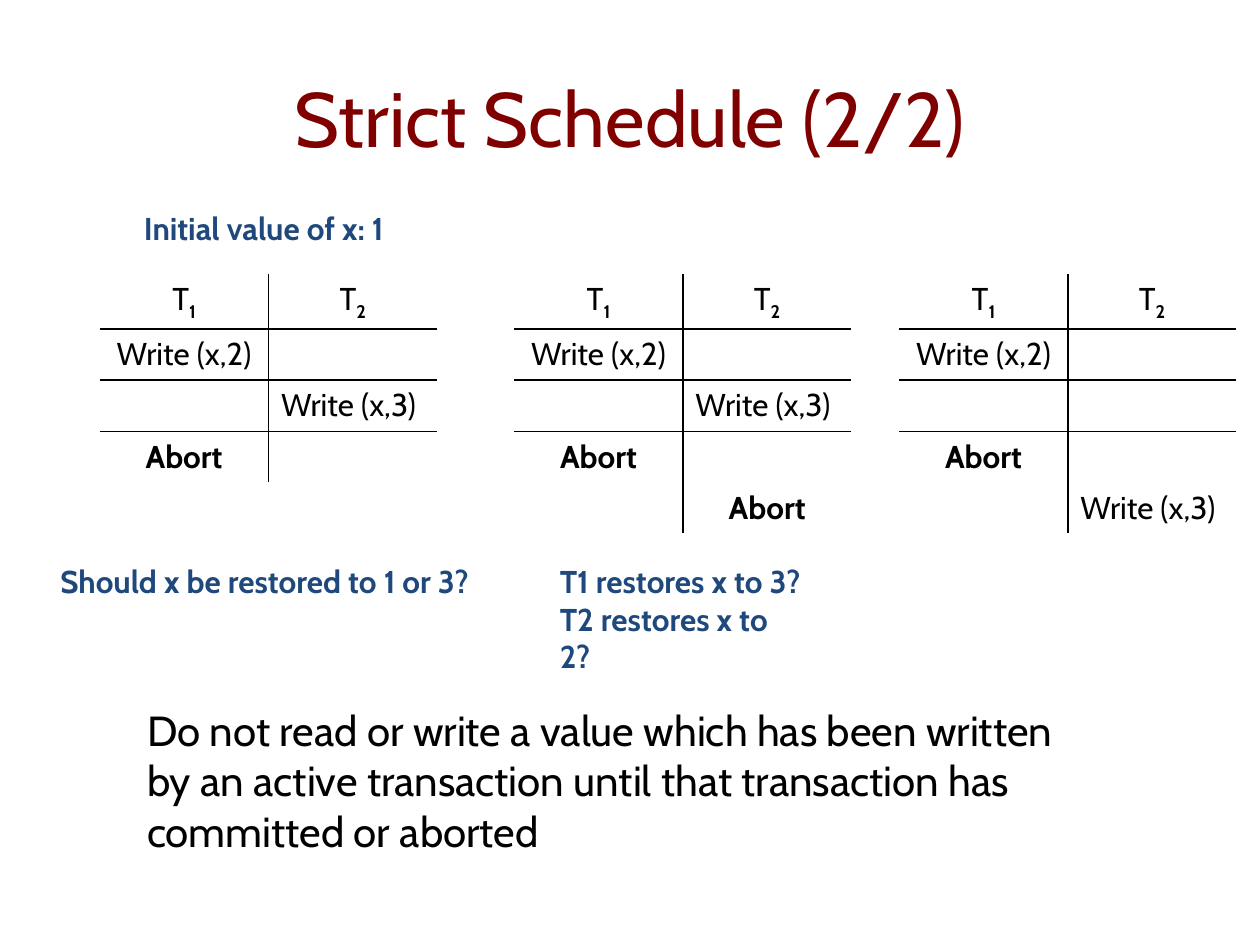
"""Build a slide showing three transaction schedules and the strict schedule rule."""

from dataclasses import dataclass

from lxml import etree
from pptx import Presentation
from pptx.dml.color import RGBColor
from pptx.enum.text import MSO_ANCHOR, MSO_AUTO_SIZE, PP_ALIGN
from pptx.oxml.ns import qn
from pptx.util import Pt

CENTER, LEFT = PP_ALIGN.CENTER, PP_ALIGN.LEFT
MIDDLE = MSO_ANCHOR.MIDDLE
NO_FIT = MSO_AUTO_SIZE.NONE
FONT = "Cabin"
COLORS = {"title": "800000", "note": "1F497D", "text": "000000", "line": "000000"}
PLAIN_STYLE = "{2D5ABB26-0587-4C30-8999-92F81FD0307C}"
TABLE_TOP, COLUMN_WIDTH, ROW_HEIGHT = 156.3, 96.4, 29.2
RULED_ROWS = 2


@dataclass
class Schedule:
    left: float
    steps: list[tuple[str, str]]


@dataclass
class Note:
    left: float
    top: float
    width: float
    height: float
    lines: list[str]
    size: float = 18
    color: str = "note"
    bold: bool = True
    wrap: bool = False


SCHEDULES = [
    Schedule(57, [("Write (x,2)", ""), ("", "Write (x,3)"), ("Abort", "")]),
    Schedule(293.8, [("Write (x,2)", ""), ("", "Write (x,3)"), ("Abort", ""), ("", "Abort")]),
    Schedule(513.8, [("Write (x,2)", ""), ("", ""), ("Abort", ""), ("", "Write (x,3)")]),
]
NOTES = [
    Note(75.2, 116, 160, 29, ["Initial value of x: 1"]),
    Note(27.4, 317.5, 248, 29, ["Should x be restored to 1 or 3?"]),
    Note(312.8, 317.5, 154, 51, ["T1 restores x to 3?", "T2 restores x to 2?"], wrap=True),
    Note(77, 399, 553, 94.5,
         ["Do not read or write a value which has been written by an active "
          "transaction until that transaction has committed or aborted"],
         size=24, color="text", bold=False, wrap=True),
]


def style_font(font, size: float, color: str, bold: bool = False) -> None:
    """Apply the deck's typeface with the given size, colour and weight."""
    font.name = FONT
    font.size = Pt(size)
    font.bold = bold
    font.color.rgb = RGBColor.from_string(COLORS[color])


def add_border(cell, side: str) -> None:
    """Draw a one-point line on a cell side such as lnB, in schema order."""
    line = etree.Element(qn(f"a:{side}"), w=str(Pt(1)))
    fill = etree.SubElement(line, qn("a:solidFill"))
    etree.SubElement(fill, qn("a:srgbClr"), val=COLORS["line"])
    properties = cell._tc.get_or_add_tcPr()
    position = sum(child.tag.startswith(qn("a:ln")) for child in properties)
    properties.insert(position, line)


def fill_header(para, number: int) -> None:
    """Write a transaction name with its bold subscript."""
    para.alignment = CENTER
    for text, bold in (("T", False), (str(number), True)):
        span = para.add_run()
        span.text = text
        style_font(span.font, 18, "text", bold)
        if bold:
            span.font._element.set("baseline", "-25000")


def fill_step(para, text: str, column: int) -> None:
    """Write one operation, with writes of the second transaction set left."""
    para.text = text
    para.alignment = LEFT if column == 1 and text.startswith("Write") else CENTER
    style_font(para.font, 18, "text", text == "Abort")


def add_schedule(page, schedule: Schedule) -> None:
    """Draw one schedule as a two-column table."""
    rows = len(schedule.steps) + 1
    frame = page.shapes.add_table(
        rows, 2, Pt(schedule.left), Pt(TABLE_TOP),
        Pt(2 * COLUMN_WIDTH), Pt(rows * ROW_HEIGHT))
    table = frame.table
    table.first_row = table.horz_banding = False
    table._tbl.tblPr.find(qn("a:tableStyleId")).text = PLAIN_STYLE
    for row in range(rows):
        for column in range(2):
            cell = table.cell(row, column)
            cell.fill.background()
            para = cell.text_frame.paragraphs[0]
            if row == 0:
                fill_header(para, column + 1)
            else:
                fill_step(para, schedule.steps[row - 1][column], column)
            add_border(cell, "lnL" if column else "lnR")
            if 0 < row <= RULED_ROWS:
                add_border(cell, "lnT")
            if row < RULED_ROWS:
                add_border(cell, "lnB")


def add_note(page, note: Note) -> None:
    """Add a text box with one paragraph per line."""
    box = page.shapes.add_textbox(
        Pt(note.left), Pt(note.top), Pt(note.width), Pt(note.height))
    frame = box.text_frame
    frame.word_wrap = note.wrap
    frame.auto_size = NO_FIT
    frame.text = "\n".join(note.lines)
    for para in frame.paragraphs:
        style_font(para.font, note.size, note.color, note.bold)


def add_title(page, text: str) -> None:
    """Place and format the slide title."""
    title = page.shapes.title
    title.left, title.top, title.width, title.height = Pt(36), Pt(21.6), Pt(648), Pt(90)
    title.text_frame.text = text
    title.text_frame.vertical_anchor = MIDDLE
    para = title.text_frame.paragraphs[0]
    para.alignment = CENTER
    style_font(para.font, 44, "title")


def main() -> None:
    """Build and save the deck."""
    deck = Presentation()
    deck.slide_width, deck.slide_height = Pt(720), Pt(540)
    page = deck.slides.add_slide(deck.slide_layouts[5])
    add_title(page, "Strict Schedule (2/2)")
    for schedule in SCHEDULES:
        add_schedule(page, schedule)
    for note in NOTES:
        add_note(page, note)
    deck.save("out.pptx")


if __name__ == "__main__":
    main()
